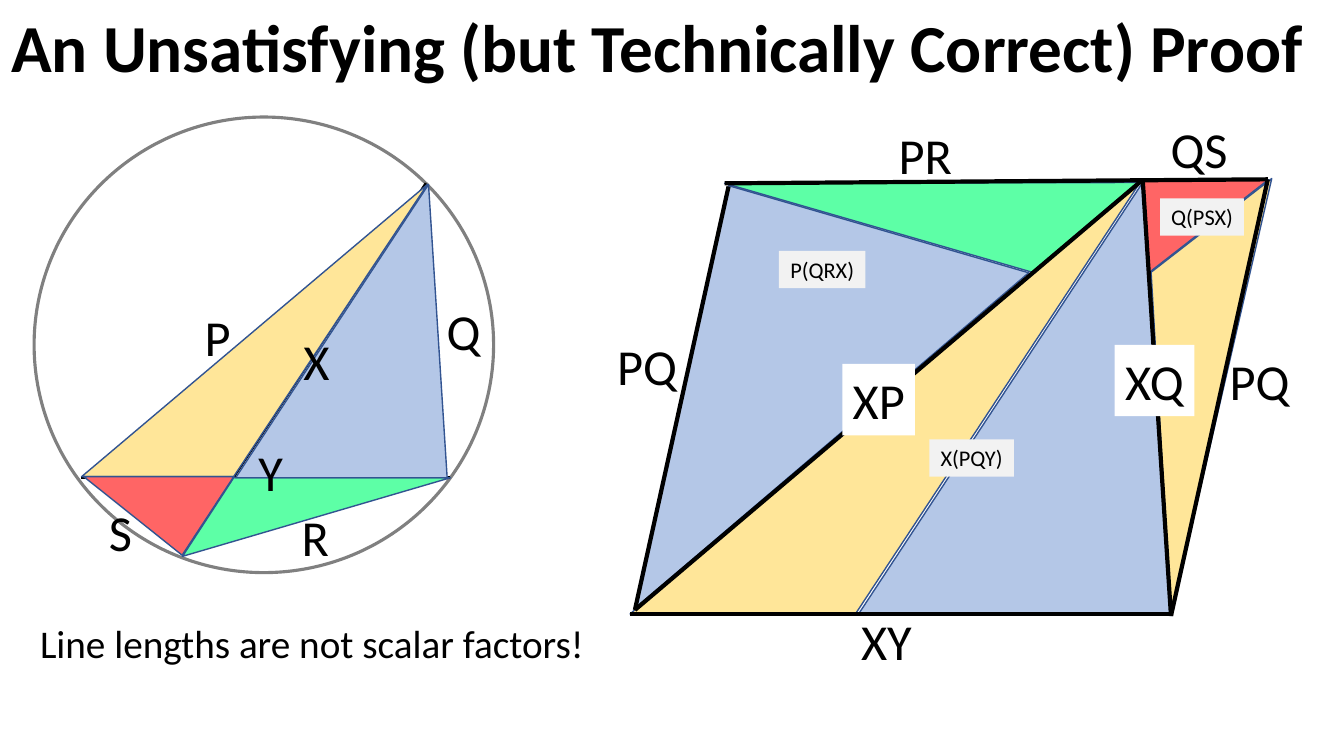
"""Build the slide with the cyclic quadrilateral and its scaled triangles."""
from lxml.etree import SubElement
from pptx import Presentation
from pptx.dml.color import RGBColor
from pptx.enum.shapes import MSO_CONNECTOR as CONN, MSO_SHAPE as SHAPE
from pptx.enum.text import MSO_ANCHOR as ANCHOR, MSO_AUTO_SIZE as AUTO, PP_ALIGN as ALIGN
from pptx.oxml.ns import qn
from pptx.util import Cm, Pt

TITLE = "An Unsatisfying (but Technically Correct) Proof"
CAPTION = "Line lengths are not scalar factors!"
FONT = "Calibri"
COLORS = {
    "black": "000000", "circle": "808080", "edge": "325491",
    "yellow": "FFE699", "green": "5DFFA6", "blue": "B4C7E7", "red": "FF6565",
    "white": "FFFFFF", "pale": "F2F2F2",
}

CIRCLE = (0.86, 2.95, 11.58, 11.48)
DIAGONALS = [((2.03, 12.04), (11.35, 12.04)), ((10.74, 4.62), (4.6, 13.97))]

# Three points make an outline; a box with apex and rotation makes a preset triangle.
CIRCLE_TRIANGLES = [
    ("yellow", [(2.06, 12.01), (10.77, 4.65), (5.89, 12.01)]),
    ("green", [(11.35, 12.04), (4.6, 14.02), (5.89, 12.04)]),
    ("blue", (5.94, 4.65, 5.33, 7.39), 0.912, 0),
    ("red", (2.11, 12.01, 3.78, 1.98), 0.344, 180),
]
SCALED_TRIANGLES = [
    ("yellow", [(15.88, 15.47), (28.75, 4.57), (21.56, 15.47)]),
    ("blue", (21.64, 4.57, 7.87, 10.9), 0.912, 0),
    ("green", [(18.26, 4.62), (28.68, 4.6), (26.01, 6.86)]),
    ("blue", (16.69, 5.56, 7.87, 10.9), 0.912, 196.2),
    ("yellow", [(32.05, 4.5), (29.51, 15.52), (29.01, 6.86)]),
    ("red", (27.97, 3.99, 3.81, 1.91), 0.344, 322.1),
]
PARALLELOGRAM = [
    ((15.88, 15.47), (29.49, 15.47)), ((28.75, 4.57), (16, 15.37)),
    ((18.36, 4.7), (16, 15.37)), ((18.26, 4.62), (31.95, 4.52)),
    ((28.8, 4.57), (29.51, 15.52)), ((31.95, 4.52), (29.51, 15.52)),
]

SIDE_LABELS = [
    ("X", 7.39, 8.2, 1.17, None), ("Q", 11, 7.44, 1.37, None),
    ("R", 7.34, 12.62, 1.22, None), ("S", 2.49, 12.5, 1.09, None),
    ("XY", 21.44, 15.24, 1.8, None), ("Y", 6.25, 11, 1.14, None),
    ("P", 4.9, 7.59, 1.17, None), ("XP", 21.23, 9.17, 1.83, "white"),
    ("XQ", 28.09, 8.69, 2.01, "white"), ("PQ", 15.29, 8.33, 2.03, None),
    ("PQ", 30.73, 8.69, 2.03, None), ("PR", 22.38, 3, 1.88, None),
    ("QS", 29.24, 2.84, 1.96, None),
]
SCALE_LABELS = [
    ("P(QRX)", 19.63, 6.32, 2.18, "pale"),
    ("X(PQY)", 23.42, 11.07, 2.13, "pale"),
    ("Q(PSX)", 29.24, 5, 2.11, "pale"),
]


def rgb(name):
    return RGBColor.from_string(COLORS[name])


def cms(values):
    return [Cm(v) for v in values]


def outline(s, color, width):
    s.line.color.rgb = rgb(color)
    s.line.width = Pt(width)


def add_triangle(sp, color, geometry, apex=None, rotation=0):
    if apex is None:
        start, *rest = [cms(point) for point in geometry]
        builder = sp.build_freeform(*start)
        builder.add_line_segments(rest, close=True)
        s = builder.convert_to_shape()
    else:
        s = sp.add_shape(SHAPE.ISOSCELES_TRIANGLE, *cms(geometry))
        s.adjustments[0] = apex
        s.rotation = rotation
    s.shadow.inherit = False
    s.fill.solid()
    s.fill.fore_color.rgb = rgb(color)
    outline(s, "edge", 1)


def add_line(sp, start, end, width):
    s = sp.add_connector(CONN.STRAIGHT, *cms(start + end))
    outline(s, "black", width)
    SubElement(s._element.spPr, qn("a:effectLst"))


def write(s, text, size, align, bold=False):
    tf = s.text_frame
    tf.text = text
    tf.word_wrap = False
    tf.auto_size = AUTO.NONE
    tf.vertical_anchor = ANCHOR.TOP
    p = tf.paragraphs[0]
    p.alignment = align
    p.font.name, p.font.size, p.font.bold = FONT, Pt(size), bold
    p.font.color.rgb = rgb("black")


def add_label(sp, text, x, y, w, fill, h, size, align=ALIGN.CENTER):
    s = sp.add_textbox(*cms((x, y, w, h)))
    if fill:
        s.fill.solid()
        s.fill.fore_color.rgb = rgb(fill)
    write(s, text, size, align)


def main():
    prs = Presentation()
    prs.slide_width, prs.slide_height = Cm(33.87), Cm(19.05)
    slide = prs.slides.add_slide(prs.slide_layouts[5])
    sp = slide.shapes

    title = sp.title
    title.left, title.top, title.width, title.height = cms((0.03, 0, 33.3, 2.31))
    write(title, TITLE, 48, ALIGN.LEFT, bold=True)

    circle = sp.add_shape(SHAPE.OVAL, *cms(CIRCLE))
    circle.shadow.inherit = False
    circle.fill.background()
    outline(circle, "circle", 2.25)
    for start, end in DIAGONALS:
        add_line(sp, start, end, 2.25)
    for triangle in CIRCLE_TRIANGLES:
        add_triangle(sp, *triangle)

    group = sp.add_group_shape()
    for triangle in SCALED_TRIANGLES:
        add_triangle(group.shapes, *triangle)
    for start, end in PARALLELOGRAM:
        add_line(sp, start, end, 3)

    for label in SIDE_LABELS:
        add_label(sp, *label, h=1.8, size=36)
    for label in SCALE_LABELS:
        add_label(sp, *label, h=0.94, size=16)
    add_label(sp, CAPTION, 0.76, 15.47, 14.38, None, 1.45, 28, ALIGN.LEFT)

    prs.save("out.pptx")


if __name__ == "__main__":
    main()
